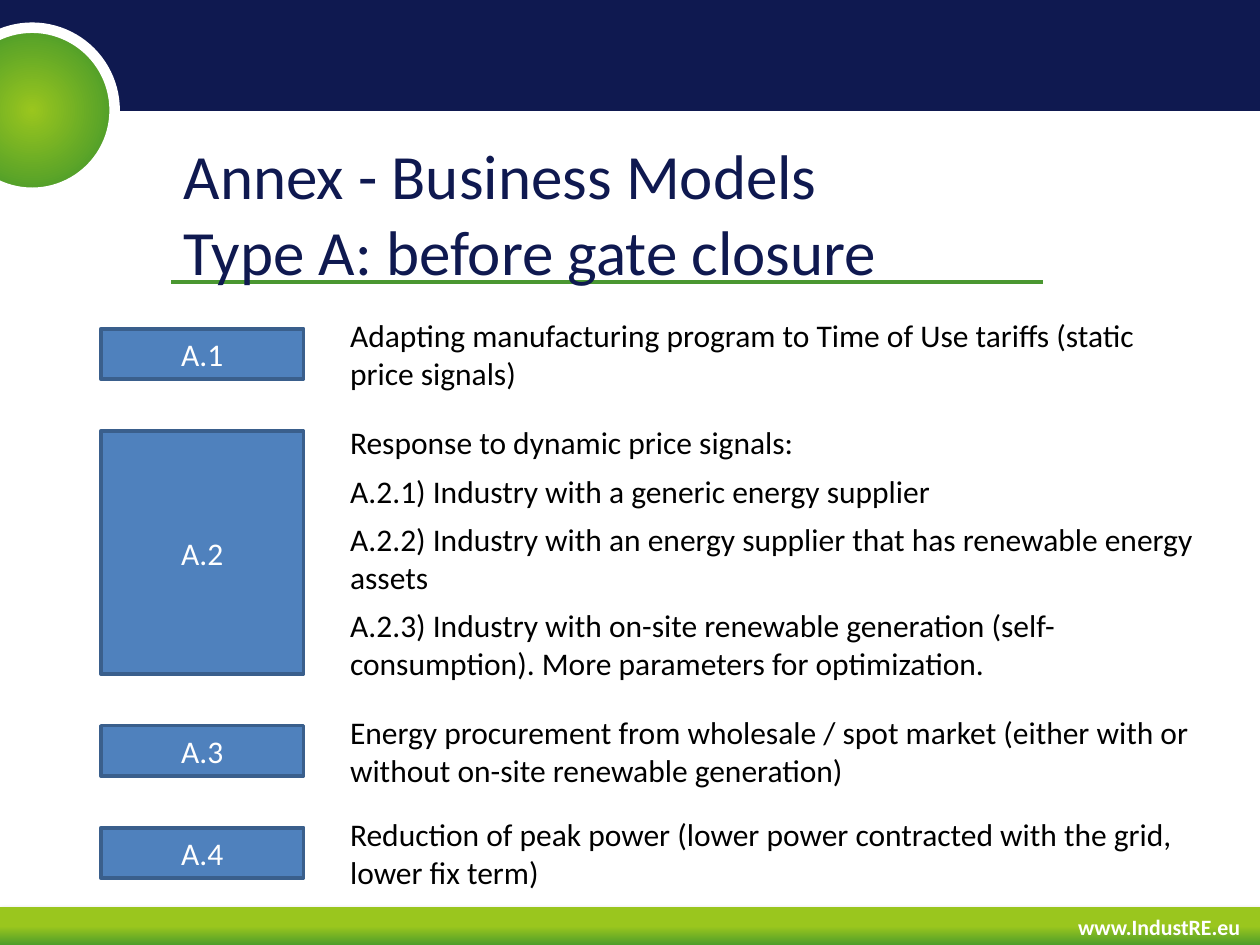
from dataclasses import dataclass

from lxml.etree import SubElement
from pptx import Presentation
from pptx.dml.color import RGBColor
from pptx.enum.shapes import MSO_CONNECTOR as Connector, MSO_SHAPE as Shape
from pptx.enum.text import MSO_ANCHOR as Anchor, MSO_AUTO_SIZE as AutoSize, PP_ALIGN as Align
from pptx.oxml.ns import qn
from pptx.util import Inches, Pt


@dataclass(frozen=True)
class Theme:
    font: str = "Calibri"
    navy: str = "0F1950"
    lime: str = "9AC61E"
    green: str = "4F9E2A"
    rule: str = "4A9731"
    blue: str = "4F81BD"
    blue_edge: str = "3A5F8C"
    white: str = "FFFFFF"
    black: str = "000000"
    title_size: float = 36
    body_size: float = 18
    footer_size: float = 12.5


THEME = Theme()
WIDTH, HEIGHT = 10, 7.5
FOOTER_TOP = 0.96 * HEIGHT
FOOTER_HEIGHT = HEIGHT - FOOTER_TOP
TITLE_LEFT, TITLE_WIDTH = 1.36, 6.92
LABEL_LEFT, LABEL_WIDTH = 0.8, 1.61
TEXT_LEFT, TEXT_WIDTH = 2.68, 6.91
ROWS_TOP, ROW_GAP = 2.61, 0.41

MODELS = [
    ("A.1", 0.4, 0.71, ["Adapting manufacturing program to Time of Use tariffs (static price signals)"]),
    ("A.2", 1.93, 2.17, [
        "Response to dynamic price signals:",
        "A.2.1) Industry with a generic energy supplier",
        "A.2.2) Industry with an energy supplier that has renewable energy assets",
        "A.2.3) Industry with on-site renewable generation (self-consumption). "
        "More parameters for optimization.",
    ]),
    ("A.3", 0.4, 0.71, ["Energy procurement from wholesale / spot market "
                        "(either with or without on-site renewable generation)"]),
    ("A.4", 0.4, 0.71, ["Reduction of peak power (lower power contracted with the grid, lower fix term)"]),
]


def color(value):
    return RGBColor.from_string(value)


def write(box, lines, size, ink, align=Align.LEFT, anchor=Anchor.MIDDLE, bold=False):
    frame = box.text_frame
    frame.word_wrap = True
    frame.vertical_anchor = anchor
    for index, line in enumerate(lines):
        para = frame.add_paragraph() if index else frame.paragraphs[0]
        para.text = line
        para.alignment = align
        if index:
            para.space_before = Pt(6)
        para.font.name = THEME.font
        para.font.size = Pt(size)
        para.font.bold = bold
        para.font.color.rgb = color(ink)


def add_text(page, area, lines, size, ink, **style):
    box = page.shapes.add_textbox(*map(Inches, area))
    write(box, lines, size, ink, **style)
    return box


def add_figure(page, kind, area, fill=None, edge=None, edge_width=0):
    figure = page.shapes.add_shape(kind, *map(Inches, area))
    figure.shadow.inherit = False
    if fill:
        figure.fill.solid()
        figure.fill.fore_color.rgb = color(fill)
    if edge:
        figure.line.color.rgb = color(edge)
        figure.line.width = Pt(edge_width)
    else:
        figure.line.fill.background()
    return figure


def shade(figure, start, end):
    figure.fill.gradient()
    figure.fill.gradient_angle = 270
    stops = zip(figure.fill.gradient_stops, (THEME.lime, THEME.green), (start, end))
    for stop, tint, position in stops:
        stop.color.rgb = color(tint)
        stop.position = position


def make_radial(figure):
    gradient = figure.element.spPr.find(qn("a:gradFill"))
    gradient.remove(gradient.find(qn("a:lin")))
    circle = SubElement(gradient, qn("a:path"), {"path": "circle"})
    sides = {side: "50000" for side in "ltrb"}
    SubElement(circle, qn("a:fillToRect"), sides)


def cast_shadow(figure):
    effects = figure.element.spPr.find(qn("a:effectLst"))
    shadow = SubElement(effects, qn("a:outerShdw"), {
        "blurRad": str(Pt(3.1)), "dist": str(Pt(1.8)), "dir": "5400000", "rotWithShape": "0"})
    tint = SubElement(shadow, qn("a:srgbClr"), {"val": THEME.black})
    SubElement(tint, qn("a:alpha"), {"val": "35000"})


def add_rule(page, left, top, width):
    rule = page.shapes.add_connector(
        Connector.STRAIGHT, *map(Inches, (left, top, left + width, top)))
    rule.line.color.rgb = color(THEME.rule)
    rule.line.width = Pt(2)
    SubElement(rule.element.spPr, qn("a:effectLst"))


def add_frame(page):
    footer = add_figure(page, Shape.RECTANGLE, (0, FOOTER_TOP, WIDTH, FOOTER_HEIGHT))
    shade(footer, 0.5, 1)
    cast_shadow(footer)
    add_text(page, (8.07, FOOTER_TOP, 2.26, FOOTER_HEIGHT), ["www.IndustRE.eu"],
             THEME.footer_size, THEME.white, align=Align.CENTER, anchor=Anchor.TOP, bold=True)
    add_figure(page, Shape.RECTANGLE, (0, 0, WIDTH, 0.88), THEME.navy)
    disc = add_figure(page, Shape.OVAL, (-0.4, 0.22, 1.31, 1.31), edge=THEME.white, edge_width=6)
    shade(disc, 0, 0.72)
    make_radial(disc)


def add_title(page):
    add_rule(page, TITLE_LEFT, 2.24, TITLE_WIDTH)
    add_text(page, (TITLE_LEFT, 1.39, TITLE_WIDTH, 0.59),
             ["Annex - Business Models\vType A: before gate closure"],
             THEME.title_size, THEME.navy)


def add_models(page):
    top = ROWS_TOP
    for name, height, text_height, lines in MODELS:
        label = add_figure(page, Shape.RECTANGLE, (LABEL_LEFT, top, LABEL_WIDTH, height),
                           THEME.blue, THEME.blue_edge, 2)
        write(label, [name], THEME.body_size, THEME.white, align=Align.CENTER)
        text_top = top + (height - text_height) / 2
        text = add_text(page, (TEXT_LEFT, text_top, TEXT_WIDTH, text_height),
                        lines, THEME.body_size, THEME.black)
        text.text_frame.auto_size = AutoSize.SHAPE_TO_FIT_TEXT
        top += height + ROW_GAP


def main():
    deck = Presentation()
    deck.slide_width, deck.slide_height = Inches(WIDTH), Inches(HEIGHT)
    page = deck.slides.add_slide(deck.slide_layouts[6])
    add_frame(page)
    add_title(page)
    add_models(page)
    deck.save("out.pptx")


if __name__ == "__main__":
    main()
